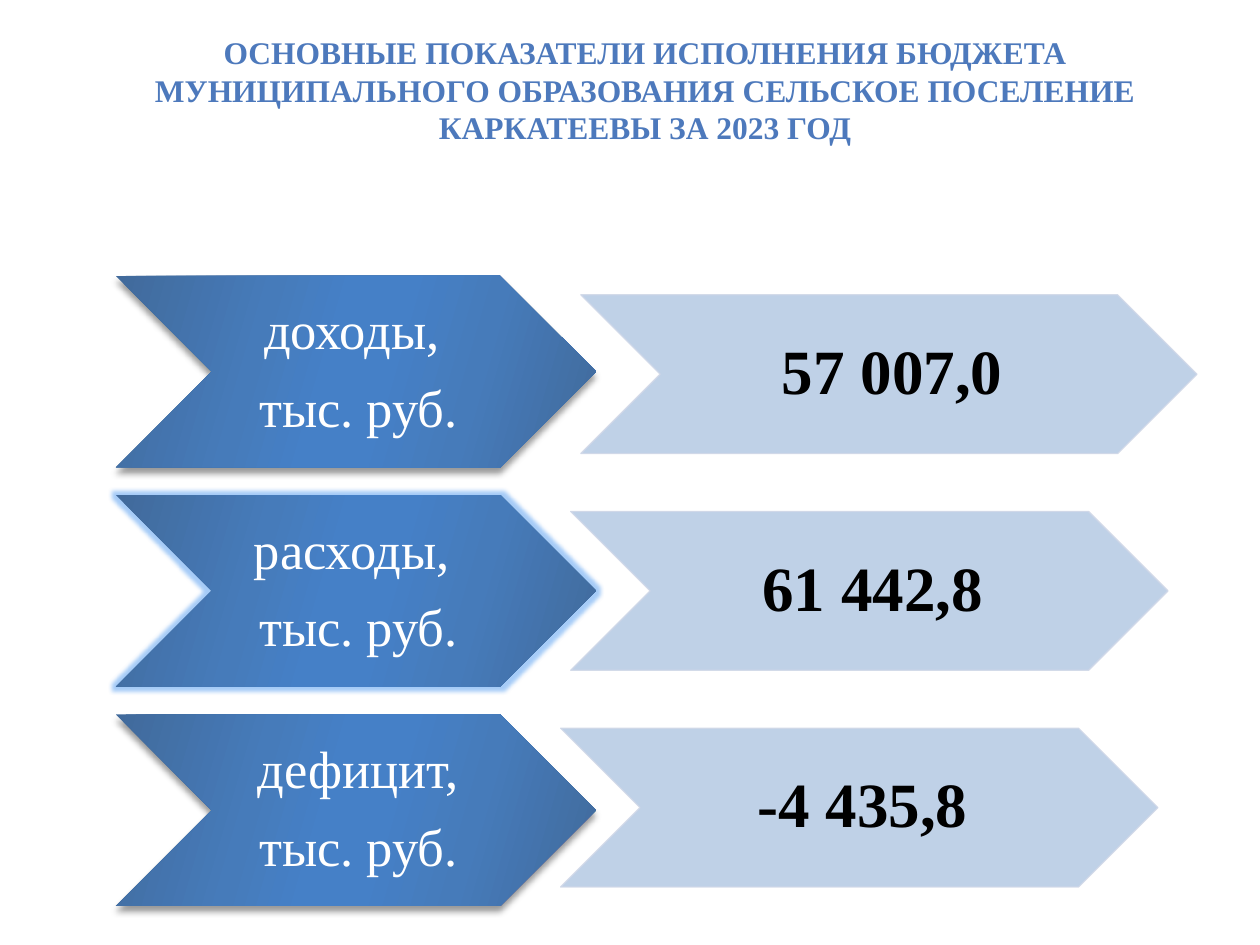
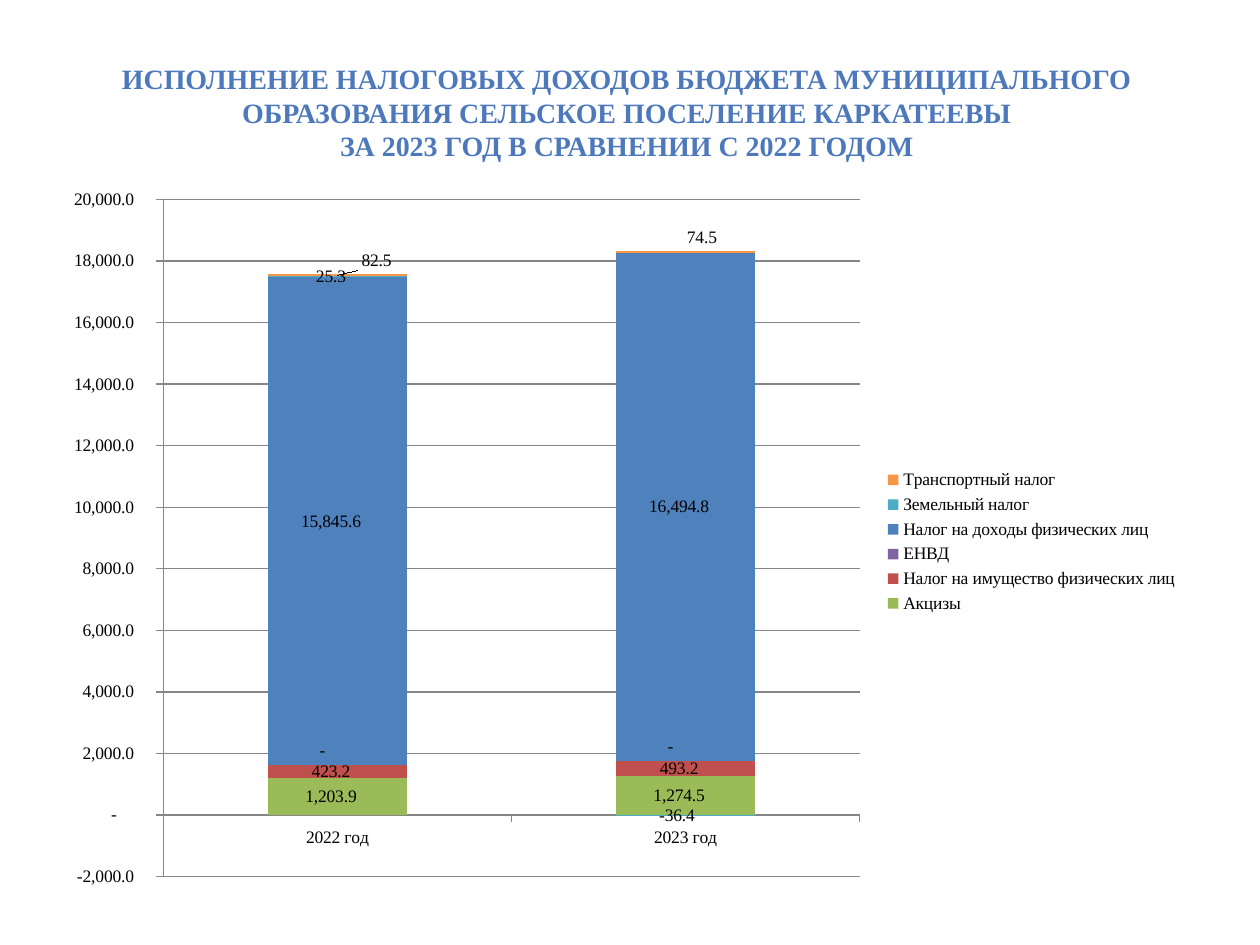
from dataclasses import dataclass

from lxml.etree import SubElement
from pptx import Presentation
from pptx.chart.data import CategoryChartData
from pptx.dml.color import RGBColor
from pptx.enum.chart import XL_CHART_TYPE, XL_LEGEND_POSITION, XL_TICK_MARK
from pptx.enum.shapes import MSO_SHAPE
from pptx.enum.text import MSO_ANCHOR, PP_ALIGN
from pptx.oxml import parse_xml
from pptx.oxml.ns import nsdecls, qn
from pptx.util import Inches, Pt

FONT = "Times New Roman"
BLUE, WHITE, BLACK, GRAY = "4D79BC", "FFFFFF", "000000", "868686"
PALE, EDGE, GLOW = "B9CDE5", "D0D8E8", "1F7EEC"
STOPS = [(0, "416A9B"), (30, "467BBA"), (45, "4580C7"),
         (55, "4580C7"), (73, "467BBA"), (100, "416A9B")]
FORMAT = r'_-* #,##0.0_р_._-;\-* #,##0.0_р_._-;_-* "-"??_р_._-;_-@_-'


@dataclass
class Box:
    left: float
    top: float
    width: float
    height: float

    def lengths(self):
        return [Inches(n) for n in (self.left, self.top, self.width, self.height)]


@dataclass
class Row:
    label: list
    value: str
    width: float
    glow: bool = False


@dataclass
class Tax:
    name: str
    values: tuple
    color: str
    shifts: tuple = ()


ROWS = [
    Row(["доходы, ", "тыс. руб."], "57 007,0", 4.89),
    Row(["расходы, ", "тыс. руб."], "61 442,8", 4.74, glow=True),
    Row(["дефицит,", "тыс. руб."], "-4 435,8", 4.74),
]
TAXES = [
    Tax("Акцизы", (1203.9, 1274.5), "9BBB59"),
    Tax("Налог на имущество физических лиц", (423.2, 493.2), "C0504D"),
    Tax("ЕНВД", (0, 0), "8064A2", ((0, -0.02), (0, -0.02))),
    Tax("Налог на доходы физических лиц", (15845.6, 16494.8), "4F81BD"),
    Tax("Земельный налог", (25.3, -36.4), "4BACC6"),
    Tax("Транспортный налог", (82.5, 74.5), "F79646", ((0.04, -0.02), (0.02, -0.02))),
]


def paint(target, color: str):
    if hasattr(target, "solid"):
        target.solid()
        target = target.fore_color
        target.rgb = RGBColor.from_string(color)
    else:
        target.rgb = RGBColor.from_string(color)


def write(shape, lines, *, size, color, bold=False, anchor=MSO_ANCHOR.MIDDLE,
          after=0, spacing=1.0, insets=(0.1, 0.05, 0.1, 0.05)):
    frame = shape.text_frame
    frame.word_wrap = True
    frame.vertical_anchor = anchor
    (frame.margin_left, frame.margin_top,
     frame.margin_right, frame.margin_bottom) = map(Inches, insets)
    for spot, line in enumerate(lines):
        par = frame.add_paragraph() if spot else frame.paragraphs[0]
        par.text = line
        par.alignment = PP_ALIGN.CENTER
        par.line_spacing = spacing
        par.space_before = Pt(0)
        par.space_after = Pt(after)
        for run in par.runs:
            run.font.name = FONT
            run.font.size = Pt(size)
            run.font.bold = bold
            paint(run.font.color, color)


def start(deck, title: str, box: Box, size: int, anchor):
    slide = deck.slides.add_slide(deck.slide_layouts[5])
    head = slide.shapes.title
    head.left, head.top, head.width, head.height = box.lengths()
    write(head, [title], size=size, color=BLUE, bold=True, anchor=anchor)
    return slide


def shade(shape):
    shape.fill.background()
    props = shape.element.spPr
    stops = "".join(f'<a:gs pos="{pos * 1000}"><a:srgbClr val="{color}"/></a:gs>'
                    for pos, color in STOPS)
    props.replace(props.find(qn("a:noFill")), parse_xml(
        f'<a:gradFill {nsdecls("a")} rotWithShape="1"><a:gsLst>{stops}</a:gsLst>'
        f'<a:lin ang="{16 * 60000}" scaled="0"/></a:gradFill>'))


def effect(shape, kind: str, color: str, **attrs):
    holder = shape.element.spPr.find(qn("a:effectLst"))
    node = SubElement(holder, qn(kind), {key: str(val) for key, val in attrs.items()})
    tint = SubElement(node, qn("a:srgbClr"), val=color)
    SubElement(tint, qn("a:alpha"), val="40000")


def arrow(slide, box: Box):
    shape = slide.shapes.add_shape(MSO_SHAPE.CHEVRON, *box.lengths())
    shape.shadow.inherit = False
    return shape


def draw_row(slide, row: Row, spot: int):
    label = arrow(slide, Box(0.92, 2.19 + 1.74 * spot, 3.81, 1.52))
    shade(label)
    label.line.fill.background()
    if row.glow:
        effect(label, "a:glow", GLOW, rad=Pt(5))
    else:
        effect(label, "a:outerShdw", BLACK, blurRad=Pt(4), dist=Pt(3.4),
               dir=90 * 60000, rotWithShape=0)
    write(label, row.label, size=30, color=WHITE, after=12, spacing=0.9,
          insets=(0.04, 0.02, 0, 0.02))

    value = arrow(slide, Box(4.61 - 0.08 * spot, 2.34 + 1.72 * spot, row.width, 1.26))
    paint(value.fill, PALE)
    paint(value.line.fill, EDGE)
    value.line.width = Pt(0.75)
    for tint in value.element.spPr.iter(qn("a:srgbClr")):
        SubElement(tint, qn("a:alpha"), val="90000")
    write(value, [row.value], size=36, color=BLACK, bold=True, spacing=0.9,
          insets=(0.05, 0.03, 0, 0.03))


def layout(inner: bool, **places):
    target = '<c:layoutTarget val="inner"/>' if inner else ""
    modes = '<c:xMode val="edge"/><c:yMode val="edge"/>' if inner else ""
    sizes = "".join(f'<c:{key} val="{val}"/>' for key, val in places.items())
    return parse_xml(f'<c:layout {nsdecls("c")}><c:manualLayout>{target}{modes}{sizes}'
                     '</c:manualLayout></c:layout>')


def style(font):
    font.name = FONT
    font.size = Pt(10)
    paint(font.color, BLACK)


def mark(series, tax: Tax):
    paint(series.format.fill, tax.color)
    series.invert_if_negative = False
    labels = series.data_labels
    labels.show_value = True
    labels.number_format = FORMAT
    labels.number_format_is_linked = False
    style(labels.font)
    for spot, (across, down) in enumerate(tax.shifts):
        style(series.points[spot].data_label.font)
    notes = series._element.iter(qn("c:dLbl"))
    for note, (across, down) in zip(list(notes), tax.shifts):
        index = note.find(qn("c:idx"))
        form = index.makeelement(qn("c:numFmt"), formatCode=FORMAT, sourceLinked="0")
        index.addnext(form)
        index.addnext(layout(False, x=across, y=down))


def draw_chart(slide, box: Box):
    data = CategoryChartData(number_format=FORMAT)
    data.categories = ["2022 год", "2023 год"]
    for tax in TAXES:
        data.add_series(tax.name, tax.values)
    chart = slide.shapes.add_chart(
        XL_CHART_TYPE.COLUMN_STACKED, *box.lengths(), data).chart
    chart.has_title = False
    style(chart.font)

    area = chart._chartSpace.chart.plotArea
    for old in area.findall(qn("c:layout")):
        area.remove(old)
    area.insert(0, layout(True, x=0.1, y=0.03, w=0.61, h=0.93))

    plot = chart.plots[0]
    plot.gap_width, plot.overlap = 150, 100
    plot.vary_by_categories = False
    for series, tax in zip(plot.series, TAXES):
        mark(series, tax)

    scale = chart.value_axis
    scale.minimum_scale, scale.maximum_scale, scale.major_unit = -2000, 20000, 2000
    scale.has_major_gridlines = True
    scale.tick_labels.number_format = FORMAT
    scale.tick_labels.number_format_is_linked = False
    paint(scale.major_gridlines.format.line.fill, GRAY)
    for axis in (scale, chart.category_axis):
        axis.major_tick_mark = XL_TICK_MARK.OUTSIDE
        axis.minor_tick_mark = XL_TICK_MARK.NONE
        paint(axis.format.line.fill, GRAY)
        style(axis.tick_labels.font)

    chart.has_legend = True
    chart.legend.position = XL_LEGEND_POSITION.RIGHT
    chart.legend.include_in_layout = False
    style(chart.legend.font)


def main():
    deck = Presentation()
    deck.slide_width, deck.slide_height = Inches(10), Inches(7.5)

    totals = start(
        deck,
        "ОСНОВНЫЕ ПОКАЗАТЕЛИ ИСПОЛНЕНИЯ БЮДЖЕТА МУНИЦИПАЛЬНОГО ОБРАЗОВАНИЯ "
        "СЕЛЬСКОЕ ПОСЕЛЕНИЕ КАРКАТЕЕВЫ ЗА 2023 ГОД",
        Box(0.67, 0.21, 8.9, 1.01), 18, MSO_ANCHOR.TOP)
    for spot, row in enumerate(ROWS):
        draw_row(totals, row, spot)

    taxes = start(
        deck,
        "ИСПОЛНЕНИЕ НАЛОГОВЫХ ДОХОДОВ БЮДЖЕТА МУНИЦИПАЛЬНОГО ОБРАЗОВАНИЯ "
        "СЕЛЬСКОЕ ПОСЕЛЕНИЕ КАРКАТЕЕВЫ\vЗА 2023 ГОД В СРАВНЕНИИ С 2022 ГОДОМ",
        Box(0.5, 0.3, 8.95, 1.18), 16, MSO_ANCHOR.MIDDLE)
    draw_chart(taxes, Box(0.39, 1.41, 9.06, 5.78))

    deck.save("out.pptx")


if __name__ == "__main__":
    main()
